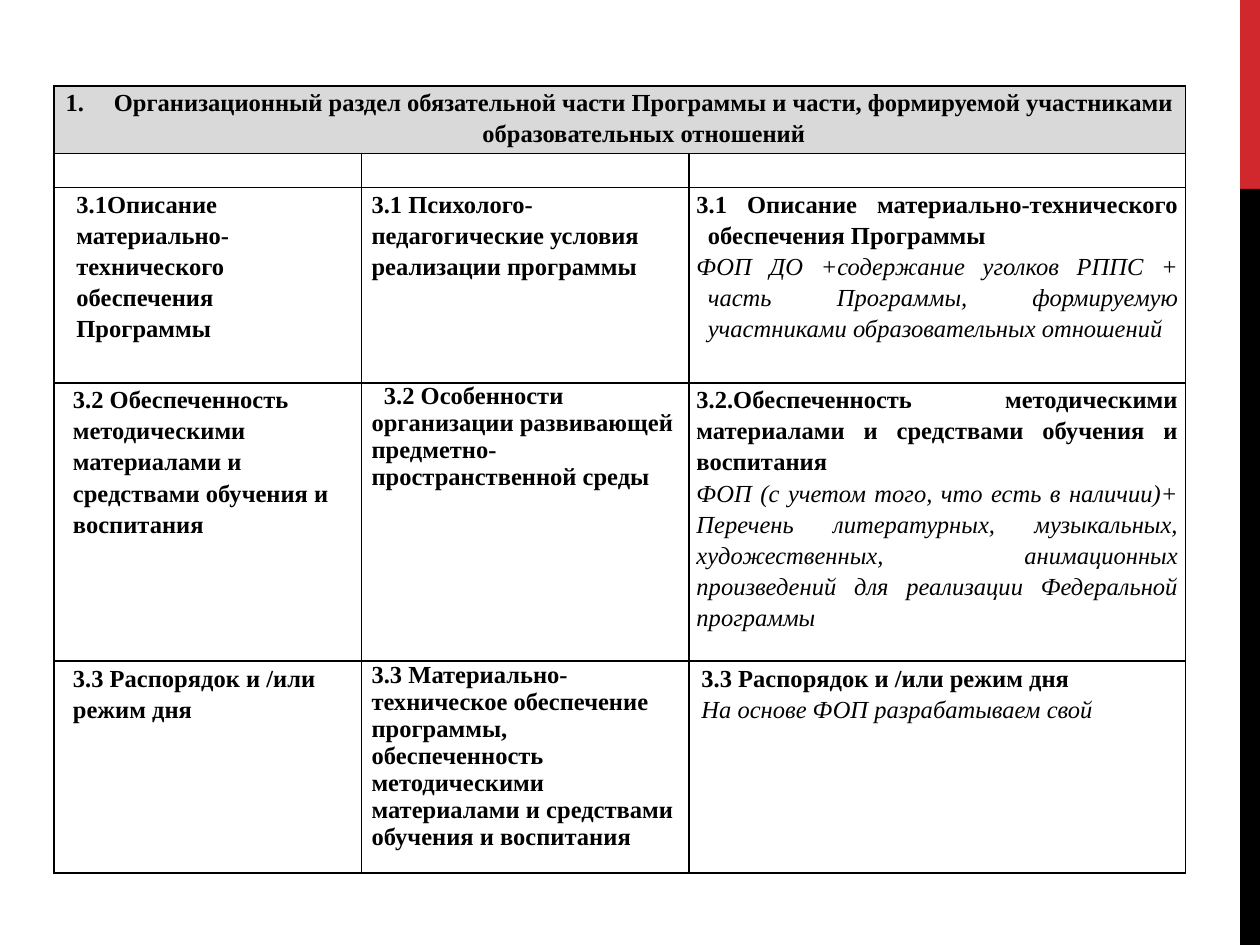
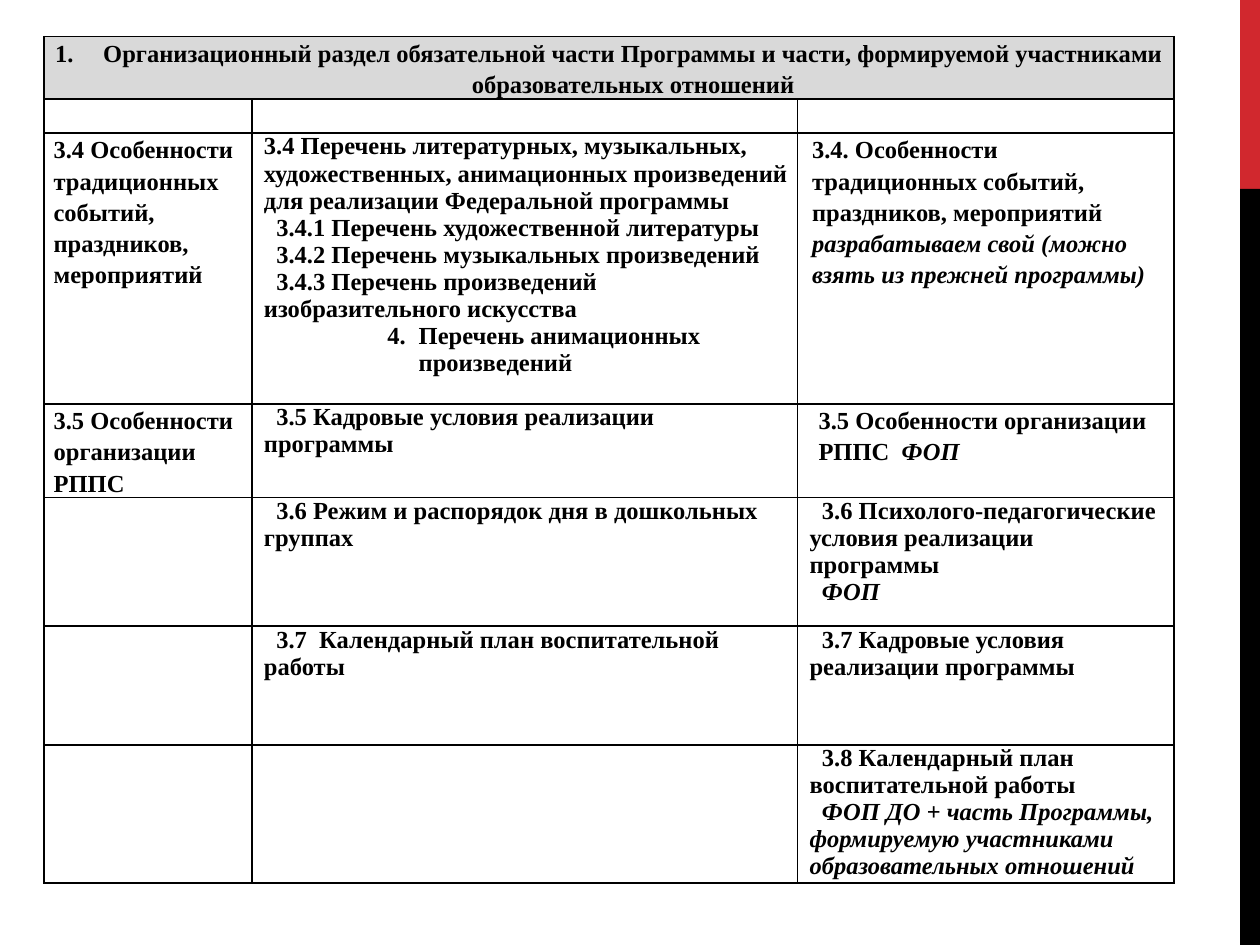
import pptx
import pptx.dml.color
import pptx.enum.shapes
import pptx.enum.text
import pptx.oxml.ns
import pptx.util
import lxml.etree

Cm = pptx.util.Cm
Pt = pptx.util.Pt
Align = pptx.enum.text.PP_ALIGN
qn = pptx.oxml.ns.qn
RED = pptx.dml.color.RGBColor(0xD1, 0x28, 0x2E)
BLACK = pptx.dml.color.RGBColor(0, 0, 0)
GRAY = pptx.dml.color.RGBColor(0xD9, 0xD9, 0xD9)
FONT = "Times New Roman"

# style: left margin cm, first indent cm, line spacing, alignment, first number
STYLES = {
    "head": (0.97, -0.97, 1.15, Align.CENTER, 1),
    "wide": (0.3, 0, 1.15, Align.LEFT, None),
    "plain": (0, 0, 1.15, Align.LEFT, None),
    "near": (0.05, 0, 1.15, Align.LEFT, None),
    "inset": (0.23, 0, 1.15, Align.LEFT, None),
    "small": (0.1, 0, 1.15, Align.LEFT, None),
    "hang": (0.23, -0.23, 1.15, Align.JUSTIFY, None),
    "just": (0, 0, 1.15, Align.JUSTIFY, None),
    "smalljust": (0.1, 0, 1.15, Align.JUSTIFY, None),
    "tight": (0.05, 0, 1, Align.LEFT, None),
    "first": (0.05, 0.25, 1, Align.LEFT, None),
    "count": (3.17, -0.63, 1, Align.LEFT, 4),
}

HEAD = ("Организационный раздел обязательной части Программы и части, "
        "формируемой участниками образовательных отношений")
MEANS = "Обеспеченность методическими материалами и средствами обучения и воспитания"
DAY = "3.3 Распорядок и /или режим дня"
EVENTS = "Особенности традиционных событий, праздников, мероприятий"
WORKS = ("литературных, музыкальных, художественных, анимационных "
         "произведений для реализации Федеральной программы")
PART = "часть Программы, формируемую участниками образовательных отношений"

TABLES = [
    {
        "left": 1.09, "top": 1.73, "inset": 0.15,
        "cols": [6.2, 6.6, 10.01],
        "rows": [1.36, 0.69, 3.94, 5.61, 4.27],
        "cells": [
            [[("wide", [("b", "3.1Описание материально-технического обеспечения Программы")])],
             [("near", [("b", "3.1 Психолого-педагогические условия реализации программы")])],
             [("hang", [("b", "3.1 Описание материально-технического обеспечения Программы")]),
              ("hang", [("i", "ФОП ДО +содержание уголков РППС + " + PART)])]],
            [[("inset", [("b", "3.2 " + MEANS)])],
             [("first", [("b", "3.2 Особенности организации развивающей предметно-пространственной среды")])],
             [("just", [("b", "3.2." + MEANS)]),
              ("just", [("i", "ФОП (с учетом того, что есть в наличии)+ Перечень " + WORKS)])]],
            [[("inset", [("b", DAY)])],
             [("tight", [("b", "3.3 Материально-техническое обеспечение программы, "
                               "обеспеченность методическими материалами и средствами "
                               "обучения и воспитания")])],
             [("smalljust", [("b", DAY)]),
              ("smalljust", [("i", "На основе ФОП разрабатываем свой")])]],
        ],
    },
    {
        "left": 0.89, "top": 0.74, "inset": 0.19,
        "cols": [4.19, 11, 7.59],
        "rows": [1.24, 0.69, 5.46, 1.89, 2.59, 2.39, 2.79],
        "cells": [
            [[("plain", [("b", "3.4 " + EVENTS)])],
             [("tight", [("b", "3.4 Перечень " + WORKS)]),
              ("first", [("b", "3.4.1 Перечень художественной литературы")]),
              ("first", [("b", "3.4.2 Перечень музыкальных произведений")]),
              ("first", [("b", "3.4.3 Перечень произведений изобразительного искусства")]),
              ("count", [("b", "Перечень анимационных произведений")])],
             [("small", [("b", "3.4. " + EVENTS)]),
              ("small", [("bi", "разрабатываем свой (можно взять из прежней программы)")])]],
            [[("plain", [("b", "3.5 Особенности организации РППС")])],
             [("first", [("b", "3.5 Кадровые условия реализации программы")])],
             [("inset", [("b", "3.5 Особенности организации РППС  "), ("bi", "ФОП")])]],
            [[],
             [("first", [("b", "3.6 Режим и распорядок дня в дошкольных группах")])],
             [("first", [("b", "3.6 Психолого-педагогические условия реализации программы")]),
              ("first", [("bi", "ФОП")])]],
            [[],
             [("first", [("b", "3.7  Календарный план воспитательной работы")])],
             [("first", [("b", "3.7 Кадровые условия реализации программы")])]],
            [[],
             [],
             [("first", [("b", "3.8 Календарный план воспитательной работы")]),
              ("first", [("bi", "ФОП ДО + " + PART)])]],
        ],
    },
]


def frame(cell, inset):
    cell.margin_left = cell.margin_right = Cm(inset)
    cell.margin_top = cell.margin_bottom = 0
    props = cell._tc.get_or_add_tcPr()
    for side in ("lnL", "lnR", "lnT", "lnB"):
        line = lxml.etree.SubElement(props, qn("a:" + side), w=str(Pt(1)))
        paint = lxml.etree.SubElement(line, qn("a:solidFill"))
        lxml.etree.SubElement(paint, qn("a:srgbClr"), val=str(BLACK))
    cell.fill.background()


def write(cell, paras):
    text = cell.text_frame
    if not paras:
        text.paragraphs[0]._p.get_or_add_endParaRPr().set("sz", "1400")
    for num, (style, runs) in enumerate(paras):
        para = text.add_paragraph() if num else text.paragraphs[0]
        left, first, space, align, start = STYLES[style]
        para.alignment = align
        para.line_spacing = float(space)
        props = para._p.get_or_add_pPr()
        props.set("marL", str(Cm(left)))
        props.set("indent", str(Cm(first)))
        if start:
            lxml.etree.SubElement(props, qn("a:buFont"), typeface="+mj-lt")
            lxml.etree.SubElement(props, qn("a:buAutoNum"),
                                  type="arabicPeriod", startAt=str(start))
        for mark, words in runs:
            run = para.add_run()
            run.text = words
            run.font.name = FONT
            run.font.size = Pt(14)
            run.font.bold = "b" in mark
            run.font.italic = "i" in mark
            run.font.color.rgb = BLACK


deck = pptx.Presentation()
deck.slide_width = Cm(25.4)
deck.slide_height = Cm(19.05)
blank = deck.slide_layouts[6]
slides = [deck.slides.add_slide(blank) for _ in TABLES]

for top, high, color in ((0, 3.81, RED), (3.81, 15.24, BLACK)):
    band = slides[0].shapes.add_shape(pptx.enum.shapes.MSO_SHAPE.RECTANGLE,
                                      Cm(25), Cm(top), Cm(0.4), Cm(high))
    band.shadow.inherit = False
    band.fill.solid()
    band.fill.fore_color.rgb = color
    band.line.fill.background()
    blank.shapes.element.append(band.element)

for slide, data in zip(slides, TABLES):
    cols, rows = data["cols"], data["rows"]
    table = slide.shapes.add_table(len(rows), len(cols), Cm(data["left"]), Cm(data["top"]),
                                   Cm(sum(cols)), Cm(sum(rows))).table
    table.first_row = False
    table.horz_banding = False
    for col, wide in zip(table.columns, cols):
        col.width = Cm(wide)
    for row, high in zip(table.rows, rows):
        row.height = Cm(high)
    grid = [[[("head", [("b", HEAD)])], [], []], [[], [], []]] + data["cells"]
    for row, line in zip(table.rows, grid):
        for cell, paras in zip(row.cells, line):
            frame(cell, data["inset"])
            write(cell, paras)
    title = table.cell(0, 0)
    title.merge(table.cell(0, 2))
    title.margin_left = title.margin_right = Cm(0.15)
    title.fill.solid()
    title.fill.fore_color.rgb = GRAY

deck.save("out.pptx")
